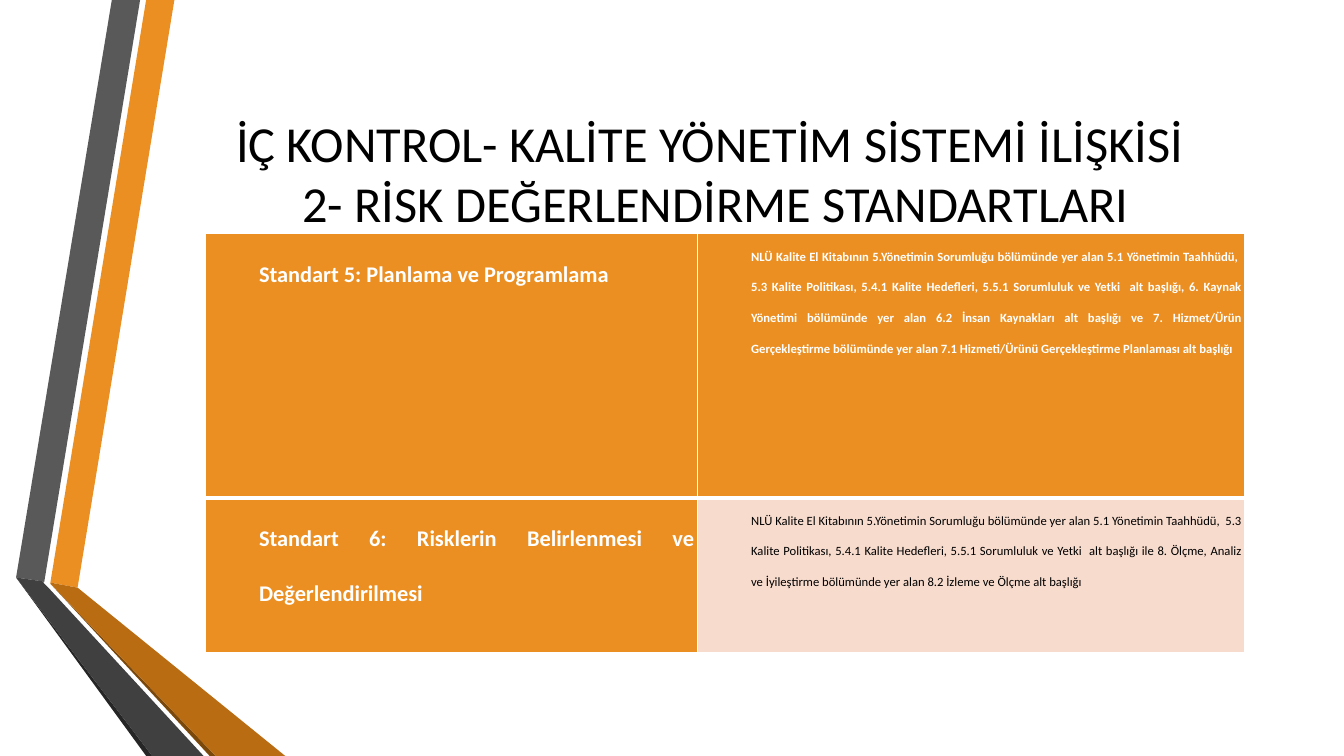
from dataclasses import dataclass

from lxml import etree
from pptx import Presentation
from pptx import util as u
from pptx.dml.color import RGBColor
from pptx.enum import text as t
from pptx.oxml import ns

PX = 9144  # EMU per px, 100 px to the inch
FONT = "Calibri"
HUES = {
    "orange": "EB8F22", "rust": "B96C11", "brown": "7B480B",
    "grey": "595959", "dark": "404040", "soot": "262626",
    "pink": "F7DBCD", "white": "FFFFFF", "black": "000000",
}


@dataclass
class Band:
    hue: str
    points: list[tuple[int, int]]


@dataclass
class Entry:
    words: str
    size: int
    fill: str = "orange"
    ink: str = "white"
    bold: bool = True


BANDS = [
    Band("orange", [(50, 578), (77, 583), (173, 0), (145, 0)]),
    Band("grey", [(139, 0), (111, 0), (16, 573), (44, 577)]),
    Band("soot", [(16, 573), (145, 750), (151, 750)]),
    Band("brown", [(50, 579), (208, 750), (214, 750)]),
    Band("rust", [(50, 579), (214, 750), (283, 750), (77, 583), (50, 578)]),
    Band("dark", [(202, 750), (48, 583), (43, 578), (44, 577), (16, 573),
                  (151, 750)]),
]
TITLE = ["İÇ KONTROL- KALİTE YÖNETİM SİSTEMİ İLİŞKİSİ ",
         "2- RİSK DEĞERLENDİRME STANDARTLARI"]
LEAD = ("NLÜ Kalite El Kitabının 5.Yönetimin Sorumluğu bölümünde yer alan "
        "5.1 Yönetimin Taahhüdü,  5.3 Kalite Politikası, 5.4.1 Kalite "
        "Hedefleri, 5.5.1 Sorumluluk ve Yetki  alt başlığı")
ROWS = [
    [Entry("Standart 5: Planlama ve Programlama", 16),
     Entry(LEAD + ", 6. Kaynak Yönetimi bölümünde yer alan 6.2 İnsan "
           "Kaynakları alt başlığı ve 7. Hizmet/Ürün Gerçekleştirme "
           "bölümünde yer alan 7.1 Hizmeti/Ürünü Gerçekleştirme Planlaması "
           "alt başlığı", 9)],
    [Entry("Standart 6: Risklerin Belirlenmesi ve Değerlendirilmesi", 16),
     Entry(LEAD + " ile 8. Ölçme, Analiz ve İyileştirme bölümünde yer alan "
           "8.2 İzleme ve Ölçme alt başlığı", 9, "pink", "black", False)],
]
WIDTHS = [488, 542]
HEIGHTS = [262, 153]


def px(n: int) -> u.Emu:
    return u.Emu(n * PX)


def color(name: str) -> RGBColor:
    return RGBColor.from_string(HUES[name])


def add_run(para, words: str, size: int, ink: str, bold: bool = False) -> None:
    run = para.add_run()
    run.text = words
    font = run.font
    font.name, font.size, font.bold = FONT, u.Pt(size), bold
    font.color.rgb = color(ink)


def draw_band(slide, band: Band) -> None:
    pen = slide.shapes.build_freeform(*band.points[0], scale=PX)
    pen.add_line_segments(band.points[1:], close=True)
    shape = pen.convert_to_shape()
    shape.shadow.inherit = False
    shape.fill.solid()
    shape.fill.fore_color.rgb = color(band.hue)
    shape.line.fill.background()


def set_title(slide) -> None:
    title = slide.shapes.title
    title.left, title.top, title.width, title.height = map(
        px, (162, 75, 1096, 192))
    frame = title.text_frame
    frame.auto_size = t.MSO_AUTO_SIZE.NONE
    frame.vertical_anchor = t.MSO_ANCHOR.MIDDLE
    para = frame.paragraphs[0]
    para.alignment = t.PP_ALIGN.CENTER
    for i, line in enumerate(TITLE):
        if i:
            para.add_line_break()
        add_run(para, line, 36, "black")


def set_edges(cell, top: int, bottom: int) -> None:
    """Give the cell white borders: 1 pt at the sides, top and bottom in pt."""
    props = cell._tc.get_or_add_tcPr()
    sides = {"L": 1, "R": 1, "T": top, "B": bottom}
    for i, (side, width) in enumerate(sides.items()):
        line = etree.Element(ns.qn(f"a:ln{side}"), w=str(u.Pt(width)))
        fill = etree.SubElement(line, ns.qn("a:solidFill"))
        etree.SubElement(fill, ns.qn("a:srgbClr"), val=HUES["white"])
        props.insert(i, line)


def fill_cell(cell, entry: Entry) -> None:
    cell.fill.solid()
    cell.fill.fore_color.rgb = color(entry.fill)
    cell.margin_left = cell.margin_right = px(3)
    cell.margin_top = cell.margin_bottom = 0
    para = cell.text_frame.paragraphs[0]
    para.alignment = t.PP_ALIGN.JUSTIFY
    para.line_spacing = 2.0
    props = para._p.get_or_add_pPr()
    props.set("marL", str(px(50)))
    props.set("indent", "0")
    add_run(para, entry.words, entry.size, entry.ink, entry.bold)


def add_grid(slide) -> None:
    frame = slide.shapes.add_table(
        len(ROWS), len(WIDTHS), px(204), px(232),
        px(sum(WIDTHS)), px(sum(HEIGHTS)))
    table = frame.table
    table.first_row = table.horz_banding = False
    for col, width in zip(table.columns, WIDTHS):
        col.width = px(width)
    for r, entries in enumerate(ROWS):
        table.rows[r].height = px(HEIGHTS[r])
        for c, entry in enumerate(entries):
            cell = table.cell(r, c)
            fill_cell(cell, entry)
            set_edges(cell, 3 if r else 1, 1 if r else 3)


def main() -> None:
    deck = Presentation()
    deck.slide_width, deck.slide_height = px(1333), px(750)
    slide = deck.slides.add_slide(deck.slide_layouts[5])
    for band in BANDS:
        draw_band(slide, band)
    set_title(slide)
    add_grid(slide)
    deck.save("out.pptx")


if __name__ == "__main__":
    main()
